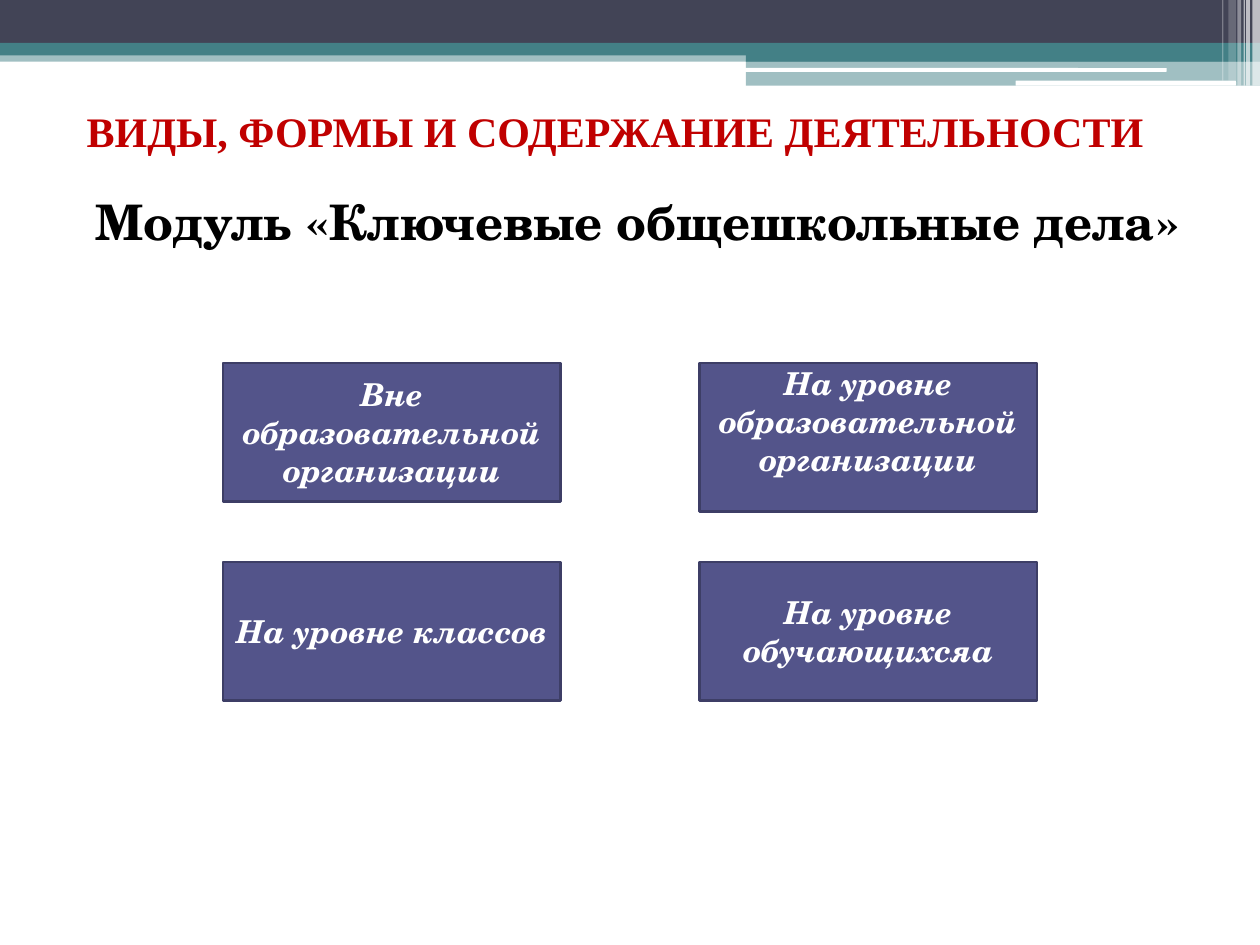
from lxml.etree import SubElement
from pptx import Presentation
from pptx.dml.color import RGBColor
from pptx.enum.shapes import MSO_SHAPE as Preset
from pptx.enum.text import MSO_ANCHOR as Anchor, PP_ALIGN as Align
from pptx.oxml.ns import qn
from pptx.util import Inches, Pt

WIDTH, HEIGHT = 10, 7.5
COLORS = {
    "navy": "424456", "teal": "438086", "white": "FFFFFF", "red": "C00000",
    "black": "000000", "violet": "53548A", "border": "3D3E66",
}
SERIF, SCHOOL = "Times New Roman", "TeX Gyre Schola"
COLUMN_LEFT, COLUMN_STEP, CARD_WIDTH = 1.77, 3.78, 2.68
ROW_TOP, ROW_STEP, CARD_HEIGHT = 2.88, 1.58, 1.1

BANDS = [
    (0, 0.4, WIDTH, 0.09, "teal", 50),
    (0, 0, WIDTH, 0.34, "navy", 100),
    (0, 0.34, WIDTH, 0.1, "teal", 100),
    (5.92, 0.39, 4.08, 0.1, "teal", 100),
    (5.92, 0.48, 4.08, 0.2, "teal", 50),
]
HIGHLIGHTS = [(5.91, 0.54, 3.35, 0.03), (8.06, 0.64, 1.75, 0.04)]
STRIPES = [
    (9.94, 0.06, 0.68, 65), (9.89, 0.03, 0.68, 65), (9.87, 0.01, 0.68, 60),
    (9.82, 0.03, 0.68, 40), (9.75, 0.06, 0.64, 20), (9.7, 0.01, 0.64, 30),
]
CARDS = [
    (0, 0, "Вне образовательной организации", CARD_HEIGHT, 0.05, 0.05),
    (1, 0, "На уровне образовательной организации", 1.18, 0, 0.26),
    (0, 1, "На уровне классов", CARD_HEIGHT, 0.05, 0.05),
    (1, 1, "На уровне обучающихсяа", CARD_HEIGHT, 0.05, 0.05),
]


def rgb(name):
    return RGBColor.from_string(COLORS[name])


def add_block(slide, box, color, opacity=100, preset=Preset.RECTANGLE):
    shape = slide.shapes.add_shape(preset, *map(Inches, box))
    shape.shadow.inherit = False
    shape.fill.solid()
    shape.fill.fore_color.rgb = rgb(color)
    shape.line.fill.background()
    if opacity < 100:
        fill_color = shape.fill._xPr.find(".//" + qn("a:srgbClr"))
        SubElement(fill_color, qn("a:alpha"), val=str(opacity * 1000))
    return shape


def write_text(shape, text, size, font, color, align, anchor, italic=False):
    frame = shape.text_frame
    frame.word_wrap = True
    frame.vertical_anchor = anchor
    paragraph = frame.paragraphs[0]
    paragraph.alignment = align
    run = paragraph.add_run()
    run.text = text
    run.font.size = Pt(size)
    run.font.name = font
    run.font.bold = True
    run.font.italic = italic
    run.font.color.rgb = rgb(color)
    return paragraph


def add_header(slide):
    for *box, color, opacity in BANDS:
        add_block(slide, box, color, opacity)
    for box in HIGHLIGHTS:
        add_block(slide, box, "white", preset=Preset.ROUNDED_RECTANGLE)
    for left, width, height, opacity in STRIPES:
        add_block(slide, (left, 0, width, height), "white", opacity)


def add_headings(slide):
    title = slide.shapes.add_textbox(*map(Inches, (0.59, 0.68, 9, 0.71)))
    write_text(title, "ВИДЫ, ФОРМЫ И СОДЕРЖАНИЕ ДЕЯТЕЛЬНОСТИ", 24, SERIF, "red",
               Align.LEFT, Anchor.MIDDLE)
    module = slide.shapes.add_textbox(*map(Inches, (0.5, 1.47, 9, 1.1)))
    module.text_frame.margin_left = Inches(0.22)
    paragraph = write_text(module, "Модуль «Ключевые общешкольные дела»", 28, SCHOOL,
                           "black", Align.CENTER, Anchor.TOP)
    paragraph.space_before = Pt(3)


def add_card(slide, column, row, text, height, top_inset, bottom_inset):
    box = (COLUMN_LEFT + column * COLUMN_STEP, ROW_TOP + row * ROW_STEP, CARD_WIDTH, height)
    card = add_block(slide, box, "violet")
    card.line.color.rgb = rgb("border")
    card.line.width = Pt(1.5)
    frame = card.text_frame
    frame.margin_left = frame.margin_right = Inches(0.08)
    frame.margin_top = Inches(top_inset)
    frame.margin_bottom = Inches(bottom_inset)
    write_text(card, text, 18, SCHOOL, "white", Align.CENTER, Anchor.MIDDLE, italic=True)


def main():
    presentation = Presentation()
    presentation.slide_width = Inches(WIDTH)
    presentation.slide_height = Inches(HEIGHT)
    slide = presentation.slides.add_slide(presentation.slide_layouts[6])
    add_header(slide)
    add_headings(slide)
    for card in CARDS:
        add_card(slide, *card)
    presentation.save("out.pptx")


if __name__ == "__main__":
    main()
